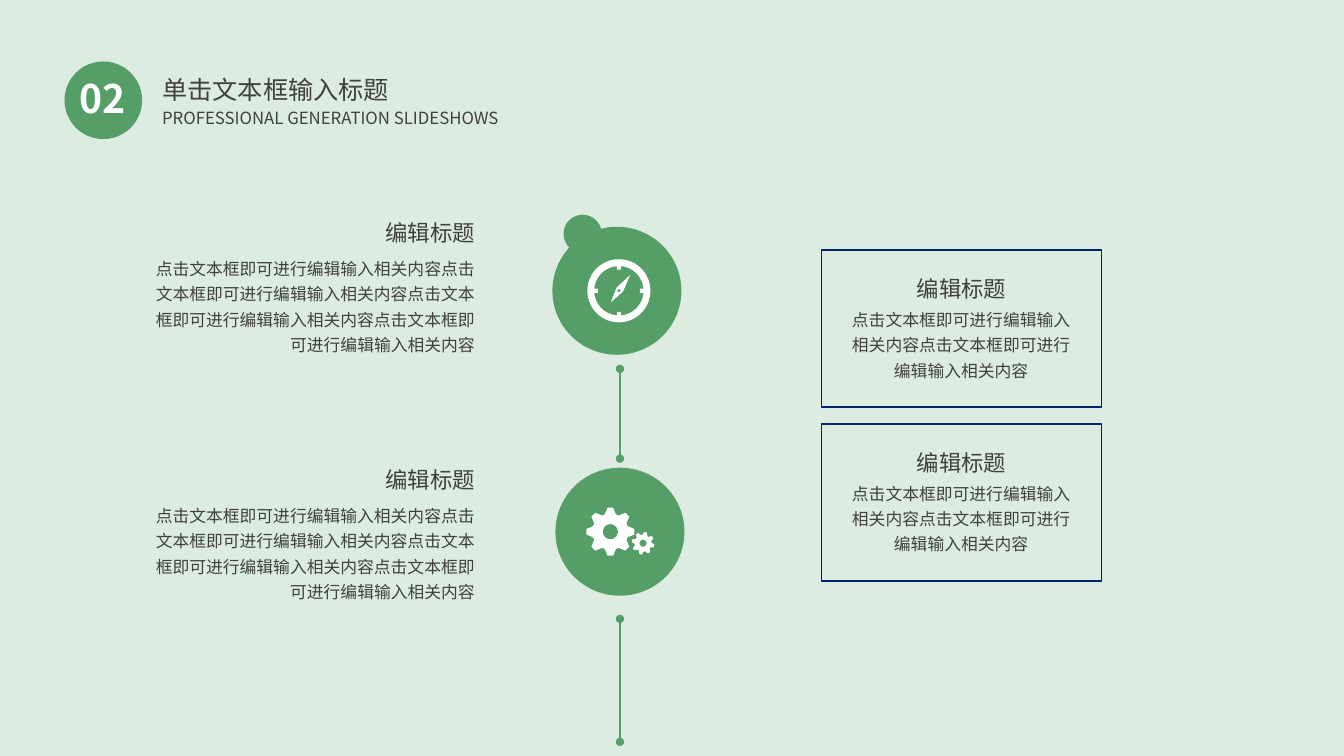
from collections import namedtuple
from math import asin, cos, degrees, radians, sin

from lxml import etree
from pptx import Presentation
from pptx.dml.color import RGBColor
from pptx.enum.shapes import MSO_CONNECTOR, MSO_SHAPE
from pptx.enum.text import MSO_ANCHOR, MSO_AUTO_SIZE, PP_ALIGN
from pptx.oxml.ns import qn
from pptx.util import Inches, Pt

LEFT, CENTER, RIGHT = PP_ALIGN.LEFT, PP_ALIGN.CENTER, PP_ALIGN.RIGHT
TOP = MSO_ANCHOR.TOP
GROW = MSO_AUTO_SIZE.SHAPE_TO_FIT_TEXT
OVAL, RECTANGLE = MSO_SHAPE.OVAL, MSO_SHAPE.RECTANGLE
STRAIGHT = MSO_CONNECTOR.STRAIGHT

GRID = Inches(0.1)
COLUMNS, ROWS = 133.33, 75
FONT = "Noto Sans CJK SC"
COLORS = {"paper": "DCECE0", "green": "559E67", "ink": "404040",
          "white": "FFFFFF", "navy": "022366"}
FORMATS = {
    "number": {"size": Pt(28), "bold": True, "name": FONT},
    "title": {"size": Pt(18), "name": FONT},
    "heading": {"size": Pt(16), "name": FONT},
    "body": {"size": Pt(12), "name": FONT},
}
HEADING = "编辑标题"
SENTENCE = "点击文本框即可进行编辑输入相关内容"

Box = namedtuple("Box", "x y w h")


def emu(length):
    return round(length * GRID)


def color(name):
    return RGBColor.from_string(COLORS[name])


def inside(box, x, y, w, h):
    return Box(box.x + x, box.y + y, w, h)


def write(holder, text, style, align, ink="ink", spacing=1.0, wrap=True):
    frame = holder.text_frame
    frame.word_wrap = wrap
    frame.auto_size = GROW
    frame.vertical_anchor = TOP
    paragraph = frame.paragraphs[0]
    paragraph.alignment = align
    paragraph.line_spacing = spacing
    run = paragraph.add_run()
    run.text = text
    for attribute, value in FORMATS[style].items():
        setattr(run.font, attribute, value)
    run.font.color.rgb = color(ink)
    etree.SubElement(run.font._element, qn("a:ea"), typeface=FONT)


def add_text(slide, box, *args, **options):
    holder = slide.shapes.add_textbox(*map(emu, box))
    write(holder, *args, **options)


def paint(shape, fill):
    shape.shadow.inherit = False
    shape.fill.solid()
    shape.fill.fore_color.rgb = color(fill)
    shape.line.fill.background()


def add_disc(slide, box):
    paint(slide.shapes.add_shape(OVAL, *map(emu, box)), "green")


def polar(center, radius, angle):
    x, y = center
    return (x + radius * cos(radians(angle)), y + radius * sin(radians(angle)))


def circle(center, radius):
    return [polar(center, radius, angle) for angle in range(0, 360, 5)]


def add_outline(shapes, *contours):
    outer, *holes = [[(emu(x), emu(y)) for x, y in contour]
                     for contour in contours]
    builder = shapes.build_freeform(*outer[0])
    builder.add_line_segments(outer[1:])
    for hole in holes:
        builder.move_to(*hole[0])
        builder.add_line_segments(hole[1:])
    paint(builder.convert_to_shape(), "white")


def dial_edge(center, radius, tick_radius, half_tick):
    edge = []
    outer = degrees(asin(half_tick / radius))
    inner = degrees(asin(half_tick / tick_radius))
    for quarter in range(0, 360, 90):
        edge += [polar(center, tick_radius, quarter - inner),
                 polar(center, tick_radius, quarter + inner)]
        steps = 18
        sweep = (90 - 2 * outer) / steps
        edge += [polar(center, radius, quarter + outer + sweep * step)
                 for step in range(steps + 1)]
    return edge


def add_compass(slide, box):
    center = (box.x + box.w / 2, box.y + box.h / 2)
    add_outline(slide.shapes, circle(center, 3.13),
                dial_edge(center, 2.45, 2.1, 0.2))
    needle = [(-0.8, 1.15), (-0.3, -0.15), (-0.2, -0.35),
              (1.1, -1.55), (0.4, 0.1), (0.2, 0.25)]
    add_outline(slide.shapes,
                [(center[0] + x, center[1] + y) for x, y in needle],
                circle(center, 0.15))


def add_gear(shapes, center, tip, root, hole, phase):
    profile = [(root, -18), (tip, -6.5), (tip, 6.5), (root, 18)]
    teeth = [polar(center, radius, phase + tooth + turn)
             for tooth in range(0, 360, 45) for radius, turn in profile]
    add_outline(shapes, teeth, circle(center, hole))


def add_gears(slide, box):
    gears = slide.shapes.add_group_shape().shapes
    add_gear(gears, (box.x + 2.45, box.y + 2.35), 2.4, 1.8, 0.75, 0)
    add_gear(gears, (box.x + 5.7, box.y + 3.5), 1.13, 0.83, 0.35, 13)


def add_link(slide, x, top, bottom):
    link = slide.shapes.add_connector(
        STRAIGHT, *map(emu, (x, top, x, bottom)))
    link.line.color.rgb = color("green")
    link.line.width = Pt(1.5)
    ends = link.line._get_or_add_ln()
    for end in ("a:headEnd", "a:tailEnd"):
        etree.SubElement(ends, qn(end), type="oval")
    etree.SubElement(link._element.spPr, qn("a:effectLst"))


def add_header(slide, box):
    add_disc(slide, inside(box, 0, 0, 7.7, 7.7))
    add_text(slide, inside(box, 0.2, 0.8, 7.2, 5.7), "02", "number", CENTER,
             ink="white")
    title = slide.shapes.title
    place = inside(box, 8.7, -0.7, 24.7, 5.6)
    for side, length in zip(("left", "top", "width", "height"), place):
        setattr(title, side, emu(length))
    write(title, "单击文本框输入标题", "title", LEFT, spacing=1.5, wrap=False)
    add_text(slide, inside(box, 8.7, 4.1, 46.4, 3),
             "PROFESSIONAL GENERATION SLIDESHOWS", "body", LEFT)


def add_timeline(slide, box):
    compass_disc = inside(box, 0, 1.2, 12.8, 12.7)
    gears_disc = inside(box, 0.3, 25.1, 12.8, 12.7)
    add_disc(slide, compass_disc)
    add_compass(slide, inside(compass_disc, 3.5, 3.2, 6.2, 6.3))
    add_disc(slide, inside(box, 1.1, 0, 3.8, 3.8))
    add_disc(slide, gears_disc)
    add_gears(slide, inside(gears_disc, 3, 4, 6.9, 4.7))
    for top, bottom in ((15.3, 24.2), (40.1, 52.3)):
        add_link(slide, box.x + 6.7, box.y + top, box.y + bottom)


def add_card(slide, box):
    frame = slide.shapes.add_shape(RECTANGLE, *map(emu, box))
    frame.shadow.inherit = False
    frame.fill.background()
    frame.line.color.rgb = color("navy")
    frame.line.width = Pt(1)
    add_text(slide, inside(box, 1.9, 4.95, 23.9, 8.6), SENTENCE * 2, "body",
             CENTER, spacing=1.25)
    add_text(slide, inside(box, 8, 2, 11.8, 3.7), HEADING, "heading", CENTER)


def add_note(slide, box):
    add_text(slide, inside(box, 0, 3.4, box.w, 11.1), SENTENCE * 4, "body",
             RIGHT, spacing=1.25)
    add_text(slide, inside(box, box.w - 14.9, 0, 14.9, 3.7), HEADING,
             "heading", RIGHT)


def main():
    deck = Presentation()
    deck.slide_width, deck.slide_height = emu(COLUMNS), emu(ROWS)
    slide = deck.slides.add_slide(deck.slide_layouts[5])
    slide.background.fill.solid()
    slide.background.fill.fore_color.rgb = color("paper")
    add_header(slide, Box(6.4, 6.1, 55.1, 7.7))
    add_timeline(slide, Box(54.8, 21.3, 13.1, 52.3))
    for row in range(2):
        add_card(slide, Box(81.5, 24.8 + 17.25 * row, 27.8, 15.6))
        add_note(slide, Box(13.6, 21.3 + 24.5 * row, 34.5, 14.5))
    deck.save("out.pptx")


if __name__ == "__main__":
    main()
